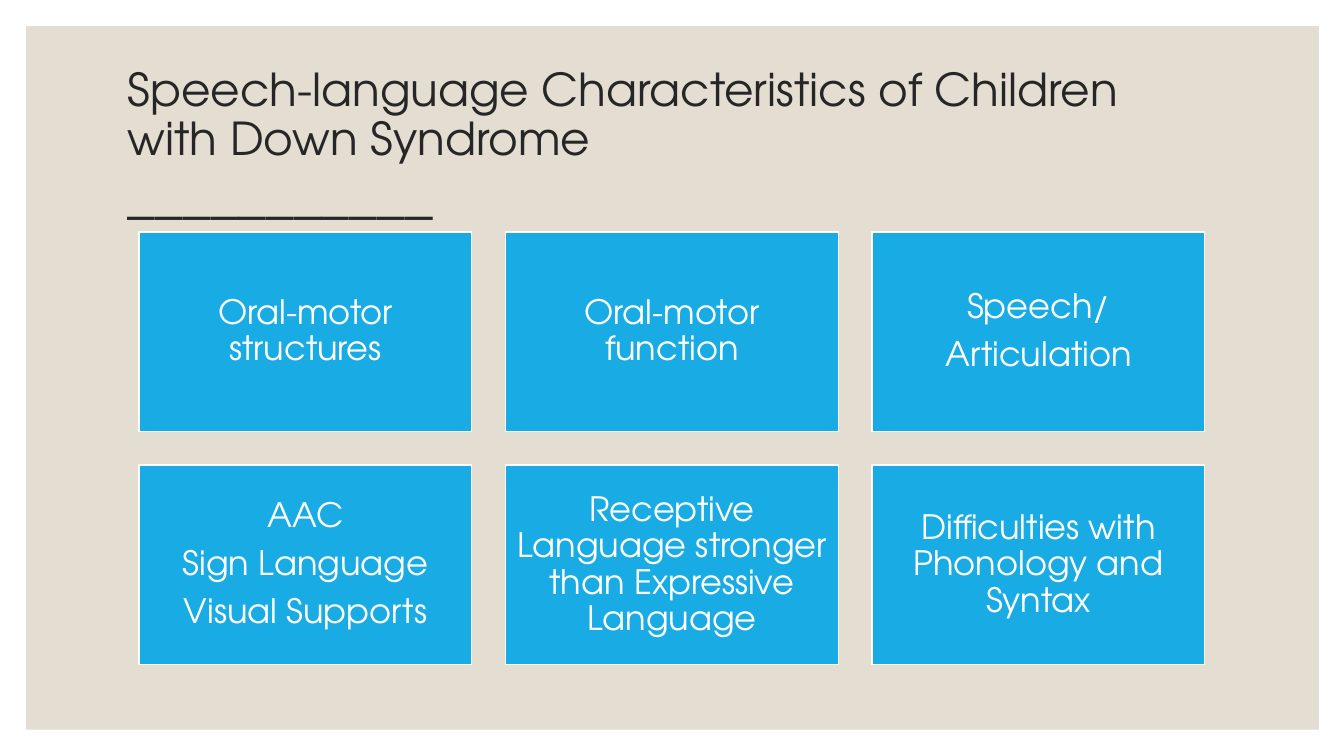
from pptx import Presentation
from pptx.dml.color import RGBColor
from pptx.enum.shapes import MSO_SHAPE
from pptx.enum.text import MSO_ANCHOR, PP_ALIGN
from pptx.util import Inches, Pt

RECT = MSO_SHAPE.RECTANGLE
MIDDLE = MSO_ANCHOR.MIDDLE
LEFT, CENTER = PP_ALIGN.LEFT, PP_ALIGN.CENTER

WHITE = RGBColor(0xFF, 0xFF, 0xFF)
SAND = RGBColor(0xE3, 0xDE, 0xD1)
BLUE = RGBColor(0x19, 0xAC, 0xE4)
INK = RGBColor(0x26, 0x26, 0x26)

TITLE = [
    ("Speech-language Characteristics of Children with Down Syndrome", 32.4),
    ("___________", 39.6),
]
CARDS = [
    ["Oral-motor structures"],
    ["Oral-motor function"],
    ["Speech/", "Articulation"],
    ["AAC", "Sign Language", "Visual Supports"],
    ["Receptive Language stronger than Expressive Language"],
    ["Difficulties with Phonology and Syntax"],
]
COLUMNS = 3
GRID_LEFT, GRID_TOP = 1.38, 2.3
CARD_W, CARD_H, GAP = 3.3, 1.98, 0.335


def write_text(tf, paragraphs, font, color, align=LEFT, inset=0.05, space=0):
    tf.word_wrap = True
    tf.vertical_anchor = MIDDLE
    tf.margin_left = tf.margin_right = Inches(0.1)
    tf.margin_top = tf.margin_bottom = Inches(inset)
    for i, lines in enumerate(paragraphs):
        p = tf.add_paragraph() if i else tf.paragraphs[0]
        p.alignment = align
        p.line_spacing = 0.9
        if i:
            p.space_before = Pt(space)
        for j, (text, size) in enumerate(lines):
            if j:
                p.add_line_break()
            r = p.add_run()
            r.text = text
            r.font.name = font
            r.font.size = Pt(size)
            r.font.color.rgb = color


class SlideBuilder:
    font = "TeX Gyre Adventor"
    card_size = 24

    def __init__(self, prs):
        self.slide = prs.slides.add_slide(prs.slide_layouts[6])

    def rect(self, x, y, w, h, fill, line=None):
        sp = self.slide.shapes.add_shape(RECT, Inches(x), Inches(y), Inches(w), Inches(h))
        sp.shadow.inherit = False
        sp.fill.solid()
        sp.fill.fore_color.rgb = fill
        if line is None:
            sp.line.fill.background()
        else:
            sp.line.color.rgb = line
            sp.line.width = Pt(1)
        return sp

    def title(self, x, y, w, h, lines):
        sp = self.slide.shapes.add_textbox(Inches(x), Inches(y), Inches(w), Inches(h))
        write_text(sp.text_frame, [lines], self.font, INK)

    def card(self, x, y, texts):
        sp = self.rect(x, y, CARD_W, CARD_H, BLUE, WHITE)
        paragraphs = [[(text, self.card_size)] for text in texts]
        write_text(sp.text_frame, paragraphs, self.font, WHITE,
                   align=CENTER, inset=0.1, space=8.4)


def main():
    prs = Presentation()
    prs.slide_width, prs.slide_height = Inches(13.33), Inches(7.5)
    s = SlideBuilder(prs)
    s.rect(0.26, 0.26, 12.82, 6.98, SAND)
    s.title(1.17, 0.7, 11, 1.5, TITLE)
    for i, texts in enumerate(CARDS):
        row, col = divmod(i, COLUMNS)
        s.card(GRID_LEFT + col * (CARD_W + GAP), GRID_TOP + row * (CARD_H + GAP), texts)
    prs.save("out.pptx")


if __name__ == "__main__":
    main()
